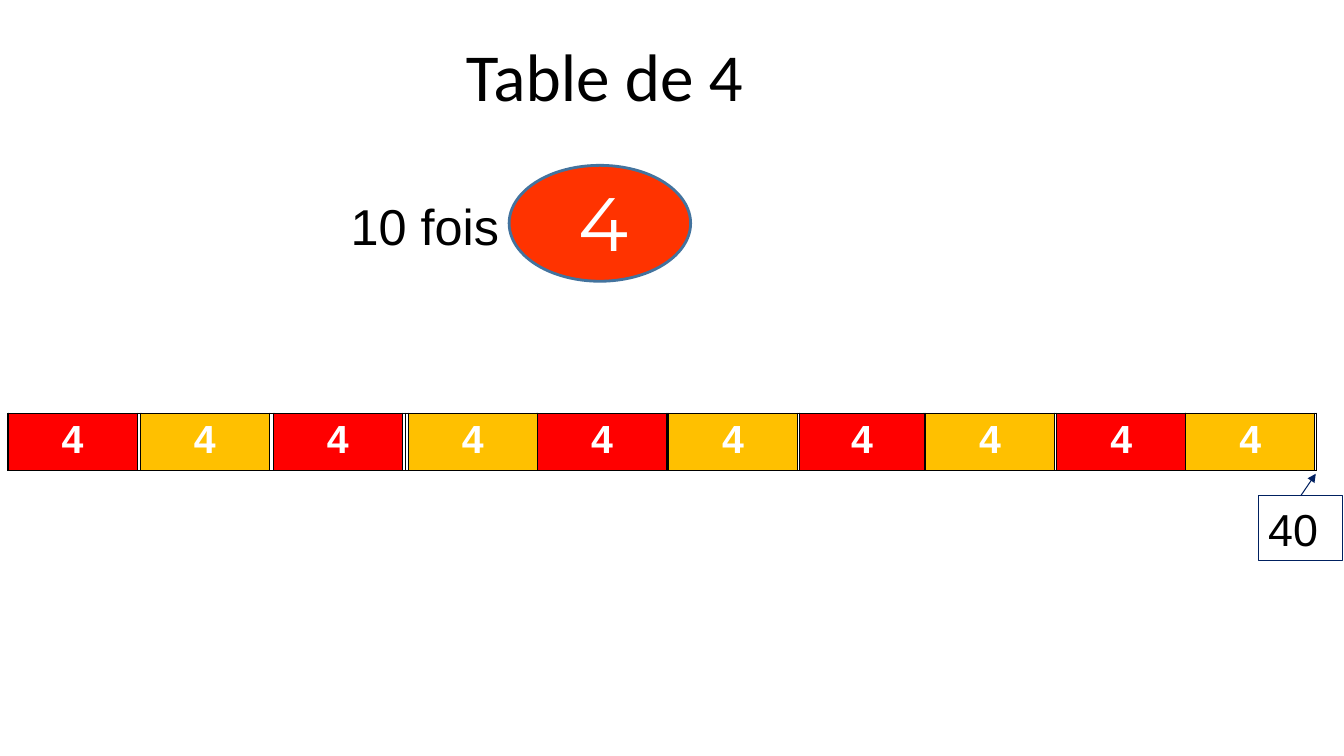
"""Build a slide that shows the table of 4 as a strip of ten blocks."""
from lxml import etree
from pptx import Presentation
from pptx.dml.color import RGBColor
from pptx.enum import shapes, text
from pptx.oxml import parse_xml
from pptx.oxml.ns import nsdecls, qn
from pptx.util import Inches, Pt

TITLE = "Table de 4"
TIMES = "10 fois"
NUMBER = "4"
TOTAL = "40"
BLOCK_LEFTS = [0.08, 1.39, 2.71, 4.05, 5.33, 6.63, 7.93, 9.18, 10.48, 11.76]
BLOCK_WIDTHS = [1.28] * 6 + [1.24] + [1.28] * 3
BLOCK_COLORS = ["FF0000", "FFC000"]
STRIP_WIDTHS = [1.32, 1.32, 1.3, 1.3, 1.3, 1.31, 1.23, 1.3, 1.3, 1.3]
STRIP_TOP, STRIP_HEIGHT = 4.1, 0.57
NAVY = "002060"


def color(value):
    return RGBColor.from_string(value)


def box(left, top, width, height):
    return [Inches(length) for length in (left, top, width, height)]


def write(frame, words, size, font="Arial", ink="000000", bold=False,
          align=text.PP_ALIGN.LEFT, wrap=True):
    frame.word_wrap = wrap
    paragraph = frame.paragraphs[0]
    paragraph.alignment = align
    run = paragraph.add_run()
    run.text = words
    run.font.size = Pt(size)
    run.font.name = font
    run.font.bold = bold
    run.font.color.rgb = color(ink)


def outline(part, ink, width):
    part.line.color.rgb = color(ink)
    part.line.width = Pt(width)


def add_row(slide, left, widths):
    row = slide.shapes.add_table(
        1, len(widths), *box(left, STRIP_TOP, sum(widths), STRIP_HEIGHT)).table
    row.first_row = row.horz_banding = False
    for column, width in zip(row.columns, widths):
        column.width = Inches(width)
    for cell in row.iter_cells():
        cell.fill.background()
        properties = cell._tc.get_or_add_tcPr()
        for place, side in enumerate(("lnL", "lnR", "lnT", "lnB")):
            properties.insert(place, parse_xml(
                f'<a:{side} {nsdecls("a")} w="12700"><a:solidFill>'
                f'<a:srgbClr val="000000"/></a:solidFill></a:{side}>'))
    return row


def add_shape(slide, kind, place):
    shape = slide.shapes.add_shape(kind, *box(*place))
    shape.shadow.inherit = False
    return shape


def add_strip(slide):
    add_row(slide, BLOCK_LEFTS[0], STRIP_WIDTHS)
    for index, (left, width) in enumerate(zip(BLOCK_LEFTS, BLOCK_WIDTHS)):
        block = add_row(slide, left, [width]).cell(0, 0)
        block.fill.solid()
        block.fill.fore_color.rgb = color(BLOCK_COLORS[index % 2])
        write(block.text_frame, NUMBER, 28, ink="FFFFFF", bold=True,
              align=text.PP_ALIGN.CENTER)


def add_total(slide):
    total = add_shape(slide, shapes.MSO_SHAPE.RECTANGLE, (12.48, 4.92, 0.84, 0.64))
    total.fill.background()
    outline(total, NAVY, 0.75)
    write(total.text_frame, TOTAL, 32)
    arrow = slide.shapes.add_connector(
        shapes.MSO_CONNECTOR.STRAIGHT, *box(12.9, 4.92, 13.05, 4.7))
    arrow.begin_connect(total, 0)
    outline(arrow, NAVY, 0.75)
    etree.SubElement(arrow.line._get_or_add_ln(), qn("a:tailEnd"), type="triangle")
    etree.SubElement(arrow._element.spPr, qn("a:effectLst"))


def add_product(slide):
    oval = add_shape(slide, shapes.MSO_SHAPE.OVAL, (5.05, 1.64, 1.8, 1.15))
    oval.fill.solid()
    oval.fill.fore_color.rgb = color("FF3300")
    outline(oval, "43739E", 2)
    number = slide.shapes.add_textbox(*box(5.37, 1.7, 1.24, 1.01))
    write(number.text_frame, NUMBER, 54, font="Montserrat", ink="FFFFFF",
          align=text.PP_ALIGN.CENTER)
    times = slide.shapes.add_textbox(*box(3.38, 1.89, 1.83, 0.71))
    write(times.text_frame, TIMES, 36)


def main():
    deck = Presentation()
    deck.slide_width, deck.slide_height = Inches(13.33), Inches(7.5)
    slide = deck.slides.add_slide(deck.slide_layouts[5])
    title = slide.shapes.title
    title.left, title.top, title.width, title.height = box(4.52, 0.29, 3.28, 0.9)
    title.text_frame.vertical_anchor = text.MSO_ANCHOR.TOP
    write(title.text_frame, TITLE, 48, font="Calibri", wrap=False)
    add_strip(slide)
    add_total(slide)
    add_product(slide)
    deck.save("out.pptx")


if __name__ == "__main__":
    main()
